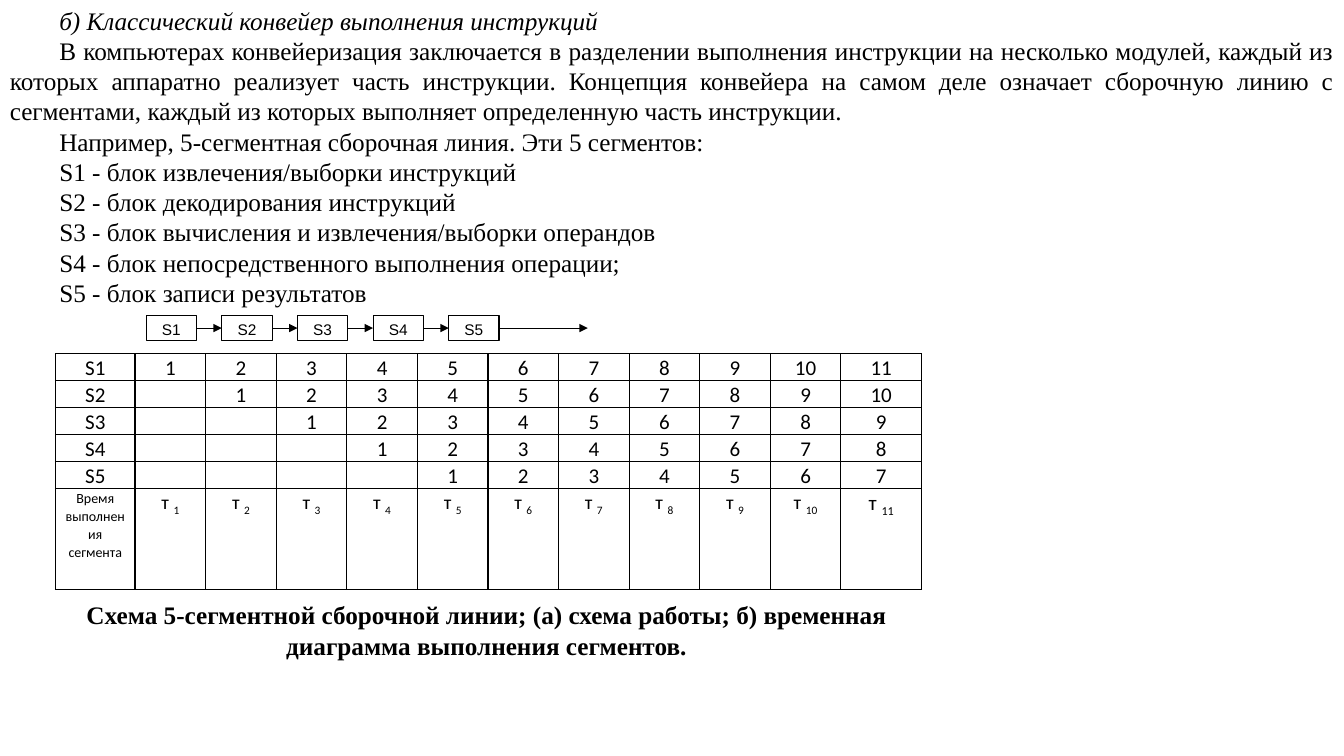
"""Slide on the classic five-segment instruction pipeline."""
from lxml.etree import SubElement
from pptx import Presentation
from pptx.dml.color import RGBColor
from pptx.enum.shapes import MSO_CONNECTOR, MSO_SHAPE
from pptx.enum.text import PP_ALIGN
from pptx.oxml.ns import qn
from pptx.util import Inches, Pt

BLACK = RGBColor(0, 0, 0)
WHITE = RGBColor(255, 255, 255)
SERIF = "Times New Roman"
SEGMENTS = ["S1", "S2", "S3", "S4", "S5"]
TICKS = 11
INTRO = [
    "б) Классический конвейер выполнения инструкций",
    "В компьютерах конвейеризация заключается в разделении выполнения инструкции "
    "на несколько модулей, каждый из которых аппаратно реализует часть инструкции. "
    "Концепция конвейера на самом деле означает сборочную линию с сегментами, "
    "каждый из которых выполняет определенную часть инструкции.",
    "Например, 5-сегментная сборочная линия. Эти 5 сегментов:",
    "S1 - блок извлечения/выборки инструкций",
    "S2 - блок декодирования инструкций",
    "S3 - блок вычисления и извлечения/выборки операндов",
    "S4 - блок непосредственного выполнения операции;",
    "S5 - блок записи результатов",
]
CAPTION = ("Схема 5-сегментной сборочной линии; (а) схема работы; "
           "б) временная диаграмма выполнения сегментов.")


def add_run(p, text, size, name):
    r = p.add_run()
    r.text = text
    r.font.size = Pt(size)
    r.font.name = name
    r.font.color.rgb = BLACK
    return r


prs = Presentation()
prs.slide_width = Inches(13.33)
prs.slide_height = Inches(7.5)
s = prs.slides.add_slide(prs.slide_layouts[6])

tf = s.shapes.add_textbox(0, 0, prs.slide_width, Inches(3.13)).text_frame
tf.word_wrap = True
for i, text in enumerate(INTRO):
    p = tf.paragraphs[0] if i == 0 else tf.add_paragraph()
    p.alignment = PP_ALIGN.JUSTIFY
    p._p.get_or_add_pPr().set("indent", str(Inches(0.49)))
    add_run(p, text, 18, SERIF).font.italic = i == 0

left, top, width, height, step = 1.45, 3.13, 0.5, 0.25, 0.75
boxes = []
for i, name in enumerate(SEGMENTS):
    sp = s.shapes.add_shape(MSO_SHAPE.RECTANGLE, Inches(left + i * step), Inches(top),
                            Inches(width), Inches(height))
    sp.shadow.inherit = False
    sp.fill.solid()
    sp.fill.fore_color.rgb = WHITE
    sp.line.color.rgb = BLACK
    sp.line.width = Pt(0.75)
    tf = sp.text_frame
    tf.vertical_anchor = 1
    p = tf.paragraphs[0]
    p.alignment = PP_ALIGN.CENTER
    add_run(p, name, 11, "Arial")
    boxes.append(sp)

middle = Inches(top + height / 2)
for i, box in enumerate(boxes):
    arrow = s.shapes.add_connector(MSO_CONNECTOR.STRAIGHT, box.left + box.width, middle,
                                   Inches(5.83), middle)
    arrow.begin_connect(box, 3)
    if i + 1 < len(boxes):
        arrow.end_connect(boxes[i + 1], 1)
    arrow.line.color.rgb = BLACK
    arrow.line.width = Pt(0.75)
    SubElement(arrow.line._get_or_add_ln(), qn("a:tailEnd"), type="triangle")
    SubElement(arrow._element.spPr, qn("a:effectLst"))

rows = len(SEGMENTS) + 1
table = s.shapes.add_table(rows, TICKS + 1, Inches(0.55), Inches(3.51),
                           Inches(8.55), Inches(2.27)).table
table.first_row = table.horz_banding = False
for c, column in enumerate(table.columns):
    column.width = Inches({0: 0.79, TICKS: 0.8}.get(c, 0.7))
for r, row in enumerate(table.rows):
    last = r == rows - 1
    row.height = Inches(1 if last else 0.21)
    for c, cell in enumerate(row.cells):
        cell.margin_left = cell.margin_right = Inches(0.09)
        cell.margin_top = cell.margin_bottom = 0
        tcPr = cell._tc.get_or_add_tcPr()
        for side in ("lnL", "lnR", "lnT", "lnB"):
            ln = SubElement(tcPr, qn(f"a:{side}"), w=str(Pt(1)))
            SubElement(SubElement(ln, qn("a:solidFill")), qn("a:srgbClr"), val=str(BLACK))
        cell.fill.background()
        p = cell.text_frame.paragraphs[0]
        p.alignment = PP_ALIGN.CENTER
        p.line_spacing = 1.07
        if last and c == 0:
            add_run(p, "Время выполнения сегмента", 10, "Calibri")
        elif last:
            size = 15 if c == TICKS else 14
            add_run(p, "т ", size, "Calibri")
            index = add_run(p, str(c), size, "Calibri")
            index.font._element.set("baseline", "-25000")
        elif c == 0:
            add_run(p, SEGMENTS[r], 15, "Calibri")
        elif c > r:
            add_run(p, str(c - r), 15, "Calibri")
        else:
            SubElement(p._p, qn("a:endParaRPr"), sz="1000")

tf = s.shapes.add_textbox(Inches(0.55), Inches(5.9), Inches(8.55), Inches(0.71)).text_frame
tf.word_wrap = True
p = tf.paragraphs[0]
p.alignment = PP_ALIGN.CENTER
add_run(p, CAPTION, 18, SERIF).font.bold = True

prs.save("out.pptx")
